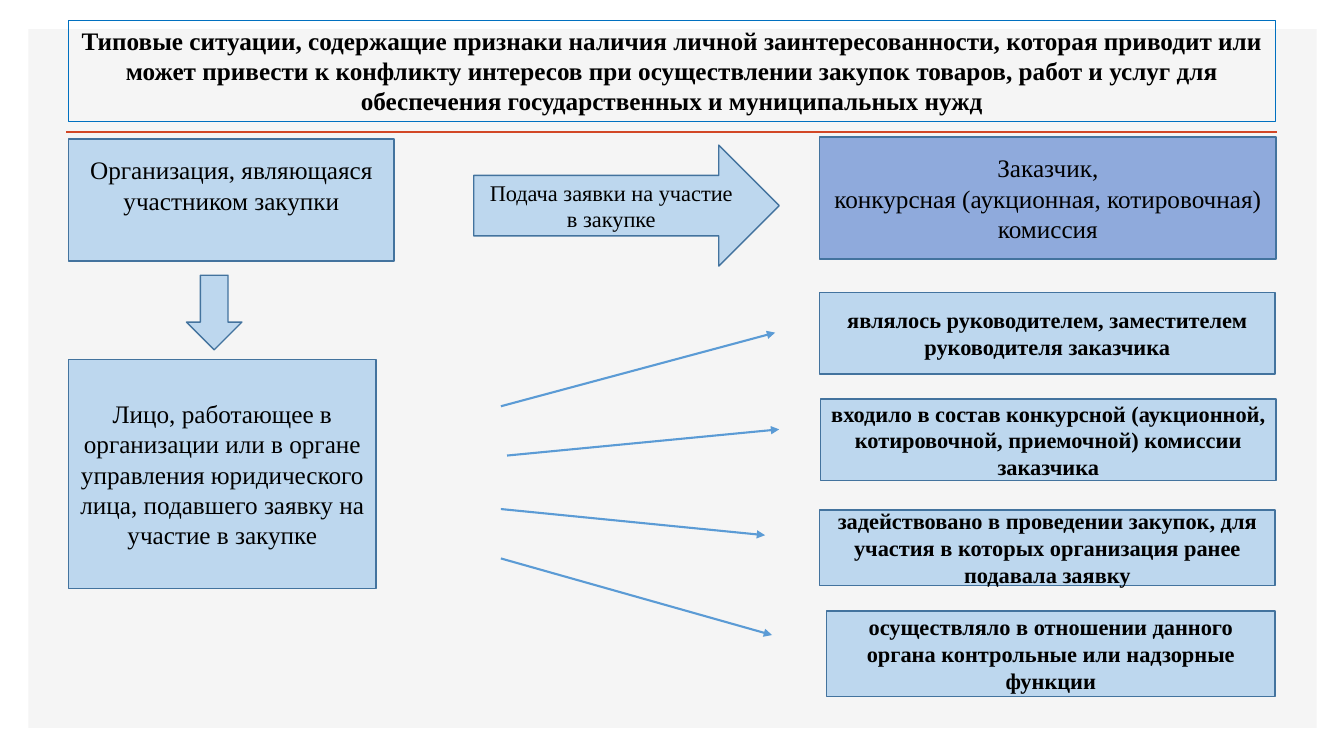
from lxml import etree
from pptx import Presentation
from pptx.dml.color import RGBColor
from pptx.enum.shapes import MSO_CONNECTOR, MSO_SHAPE
from pptx.enum.text import MSO_ANCHOR, PP_ALIGN
from pptx.oxml.ns import qn
from pptx.util import Pt

RECT, RIGHT, DOWN = MSO_SHAPE.RECTANGLE, MSO_SHAPE.RIGHT_ARROW, MSO_SHAPE.DOWN_ARROW
STRAIGHT = MSO_CONNECTOR.STRAIGHT
TOP, MIDDLE, CENTER = MSO_ANCHOR.TOP, MSO_ANCHOR.MIDDLE, PP_ALIGN.CENTER

PANEL, RULE, TITLE_EDGE = "F5F5F5", "D24726", "0070C0"
PALE, DEEP, EDGE, ARROW, INK = "BDD7EE", "8FAADC", "43739E", "5B9BD5", "000000"

LARGE = {"name": "Times New Roman", "size": Pt(18), "bold": False}
SMALL = {**LARGE, "size": Pt(16)}
TITLE = {**LARGE, "bold": True}
ROLE = {**SMALL, "bold": True}

# Situations on the right: box (left, top, width, height) and text
ROLES = [
    ((585.4, 208.8, 325.4, 58.3),
     "являлось руководителем, заместителем руководителя заказчика"),
    ((586.1, 285.1, 325.4, 58.3),
     "входило в состав конкурсной (аукционной, котировочной, приемочной) комиссии заказчика"),
    ((585.4, 364.3, 325.4, 54),
     "задействовано в проведении закупок, для участия в которых организация ранее подавала заявку"),
    ((590.4, 436.3, 320.4, 61.2),
     "осуществляло в отношении данного органа контрольные или надзорные функции"),
]
# Arrows towards them: start x, start y, end x, end y
ROLE_ARROWS = [
    (357.8, 290.2, 553.7, 237.6),
    (362.2, 325.4, 556.6, 306.7),
    (357.8, 363.6, 546.5, 382.3),
    (357.8, 398.9, 551.5, 453.6),
]


def color(value):
    return RGBColor.from_string(value)


def add_box(page, place, fill=PALE, edge=EDGE, width=1, kind=RECT):
    box = page.shapes.add_shape(kind, *map(Pt, place))
    box.shadow.inherit = False
    if fill:
        box.fill.solid()
        box.fill.fore_color.rgb = color(fill)
    else:
        box.fill.background()
    if edge:
        box.line.color.rgb = color(edge)
        box.line.width = Pt(width)
    else:
        box.line.fill.background()
    return box


def write(box, text, style, anchor=MIDDLE, bottom=3.6):
    frame = box.text_frame
    frame.word_wrap = True
    frame.vertical_anchor = anchor
    frame.margin_bottom = Pt(bottom)
    frame.text = text
    for para in frame.paragraphs:
        para.alignment = CENTER
        for span in para.runs:
            span.font.color.rgb = color(INK)
            for key, value in style.items():
                setattr(span.font, key, value)


def add_line(page, ends, stroke, width, arrow=False):
    line = page.shapes.add_connector(STRAIGHT, *map(Pt, ends))
    line.line.color.rgb = color(stroke)
    line.line.width = Pt(width)
    if arrow:
        etree.SubElement(line.line._get_or_add_ln(), qn("a:tailEnd"), type="triangle")
    etree.SubElement(line._element.spPr, qn("a:effectLst"))


def main():
    deck = Presentation()
    deck.slide_width, deck.slide_height = Pt(960), Pt(540)
    page = deck.slides.add_slide(deck.slide_layouts[6])

    # Background panel and rule under the title
    add_box(page, (20.2, 20.9, 920.2, 499), PANEL, None)
    add_line(page, (47.5, 94.3, 912.2, 94.3), RULE, 2)

    # Title
    title = add_box(page, (49, 14.4, 861.8, 72.7), None, TITLE_EDGE, 0.75)
    write(title, "Типовые ситуации, содержащие признаки наличия личной "
          "заинтересованности, которая приводит или может привести к конфликту "
          "интересов при осуществлении закупок товаров, работ и услуг для "
          "обеспечения государственных и муниципальных нужд", TITLE, TOP)

    # Bidder, application and customer
    bidder = add_box(page, (49, 99.4, 232.6, 87.1))
    write(bidder, "Организация, являющаяся участником закупки", LARGE, bottom=25.2)
    application = add_box(page, (338.4, 103.7, 218.2, 86.4), kind=RIGHT)
    write(application, "Подача заявки на участие в закупке", SMALL)
    customer = add_box(page, (585.4, 97.9, 326.2, 87.1), DEEP)
    write(customer, "Заказчик,\nконкурсная (аукционная, котировочная) комиссия", LARGE)

    # Person working for the bidder
    add_box(page, (133.2, 196.6, 39.6, 53.3), kind=DOWN)
    person = add_box(page, (49, 257, 219.6, 163.4))
    write(person, "Лицо, работающее в организации или в органе управления "
          "юридического лица, подавшего заявку на участие в закупке", LARGE)

    # Situations and the arrows to them
    for ends in ROLE_ARROWS:
        add_line(page, ends, ARROW, 1.5, arrow=True)
    for place, text in ROLES:
        write(add_box(page, place), text, ROLE)

    deck.save("out.pptx")


if __name__ == "__main__":
    main()
